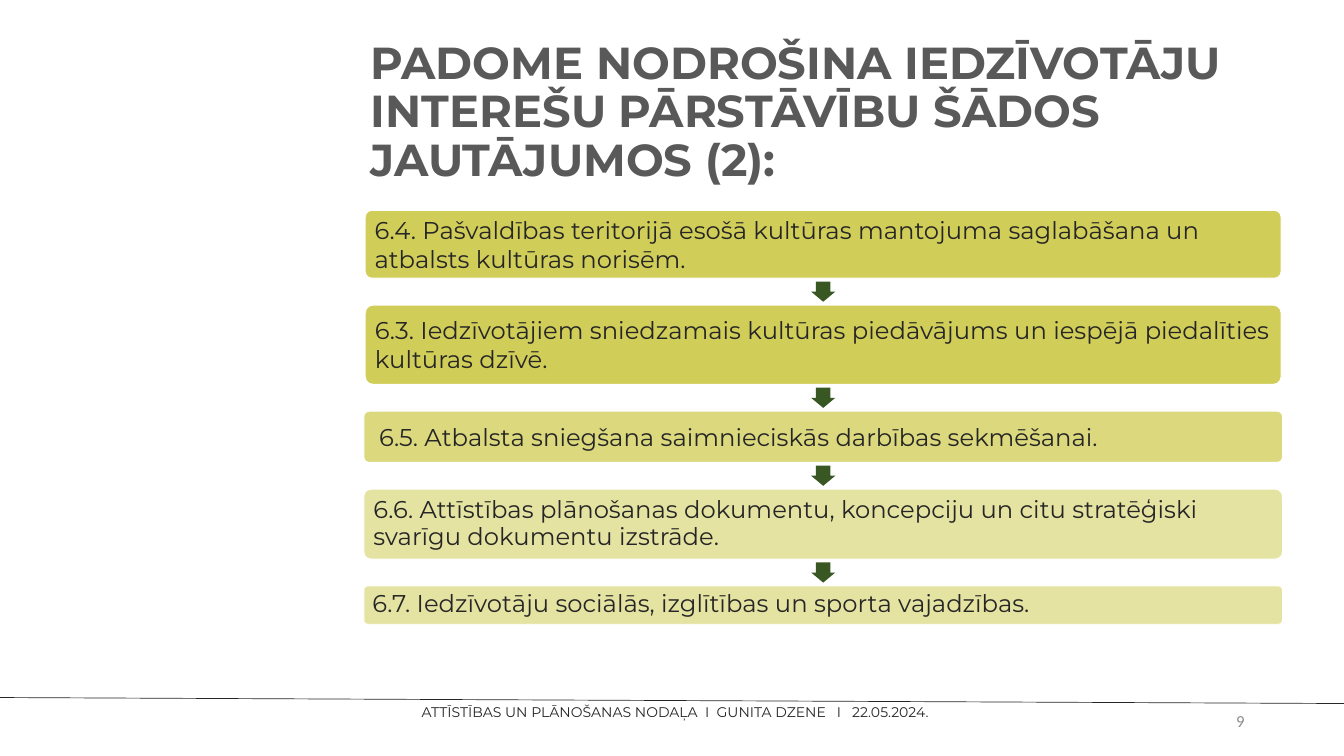
from lxml import etree
from pptx import Presentation
from pptx.dml.color import RGBColor
from pptx.enum.shapes import MSO_CONNECTOR, MSO_SHAPE
from pptx.enum.text import MSO_ANCHOR as ANCHOR, PP_ALIGN as ALIGN
from pptx.oxml.ns import qn
from pptx.util import Inches, Pt

COLORS = {
    "title": "595959",
    "text": "262626",
    "topic": "CDC847",
    "border": "FFFFFF",
    "arrow": "385723",
    "page": "8C8C8C",
}

# Topic text, box width, box height, opacity in percent, line spacing
TOPICS = [
    ("6.4. Pašvaldības teritorijā esošā kultūras mantojuma saglabāšana un "
     "atbalsts kultūras norisēm.", 13.63, 1.01, 90, 1.0),
    ("6.3. Iedzīvotājiem sniedzamais kultūras piedāvājums un iespējā piedalīties "
     "kultūras dzīvē.", 13.63, 1.18, 90, 1.0),
    (" 6.5. Atbalsta sniegšana saimnieciskās darbības sekmēšanai.",
     13.67, 0.76, 70, 1.0),
    ("6.6. Attīstības plānošanas dokumentu, koncepciju un citu stratēģiski "
     "svarīgu dokumentu izstrāde.", 13.67, 1.04, 50, 0.9),
    ("6.7. Iedzīvotāju sociālās, izglītības un sporta vajadzības.",
     13.67, 0.57, 50, 0.9),
]
FLOW_TOP, FLOW_CENTER, FLOW_GAP = 3.13, 12.25, 0.4
ARROW_WIDTH, ARROW_HEIGHT = 0.3, 0.36


def rgb(name):
    return RGBColor.from_string(COLORS[name])


def set_all(target, values):
    for name, value in values.items():
        setattr(target, name, value)


def write(shape, text, color, font, paragraph=None, anchor=ANCHOR.MIDDLE,
          insets=(0.1, 0.05)):
    side, edge = map(Inches, insets)
    frame = shape.text_frame
    set_all(frame, {"word_wrap": True, "vertical_anchor": anchor,
                    "margin_left": side, "margin_right": side,
                    "margin_top": edge, "margin_bottom": edge})
    line = frame.paragraphs[0]
    set_all(line, {"alignment": ALIGN.LEFT, **(paragraph or {})})
    run = line.add_run()
    run.text = text
    set_all(run.font, {"name": "Montserrat", **font})
    run.font.color.rgb = rgb(color)


def add_label(slide, box, *text_args, **text_options):
    label = slide.shapes.add_textbox(*map(Inches, box))
    write(label, *text_args, **text_options)


def add_filled(slide, kind, box, color, adjustments):
    shape = slide.shapes.add_shape(kind, *map(Inches, box))
    shape.shadow.inherit = False
    shape.fill.solid()
    shape.fill.fore_color.rgb = rgb(color)
    for index, value in enumerate(adjustments):
        shape.adjustments[index] = value
    return shape


def add_topic(slide, top, text, width, height, opacity, spacing):
    box = (FLOW_CENTER - width / 2, top, width, height)
    topic = add_filled(slide, MSO_SHAPE.ROUNDED_RECTANGLE, box, "topic", [0.1])
    topic.line.color.rgb = rgb("border")
    topic.line.width = Pt(1)
    fill_color = topic.fill._xPr.find(qn("a:solidFill"))[0]
    etree.SubElement(fill_color, qn("a:alpha"), val=str(opacity * 1000))
    write(topic, text, "text", {"size": Pt(26)},
          {"line_spacing": spacing}, insets=(0.11, 0.11))


def add_arrow(slide, top):
    box = (FLOW_CENTER - ARROW_WIDTH / 2, top, ARROW_WIDTH, ARROW_HEIGHT)
    arrow = add_filled(slide, MSO_SHAPE.RIGHT_ARROW, box, "arrow", [0.6, 0.5])
    arrow.rotation = 90
    arrow.line.fill.background()


def add_flow(slide):
    top = FLOW_TOP
    for number, (text, width, height, opacity, spacing) in enumerate(TOPICS, 1):
        add_topic(slide, top, text, width, height, opacity, spacing)
        top += height
        if number < len(TOPICS):
            add_arrow(slide, top + (FLOW_GAP - ARROW_HEIGHT) / 2)
        top += FLOW_GAP


def add_footer_rule(slide):
    ends = map(Inches, (0, 10.38, 20.11, 10.47))
    rule = slide.shapes.add_connector(MSO_CONNECTOR.STRAIGHT, *ends)
    rule.line.color.rgb = rgb("text")
    rule.line.width = Pt(0.75)
    etree.SubElement(rule._element.spPr, qn("a:effectLst"))


def main():
    deck = Presentation()
    set_all(deck, {"slide_width": Inches(20), "slide_height": Inches(11.25)})
    slide = deck.slides.add_slide(deck.slide_layouts[6])

    # Topics joined by arrows
    add_flow(slide)

    # Footer
    add_footer_rule(slide)
    add_label(slide, (0.15, 10.47, 19.8, 0.25),
              "ATTĪSTĪBAS UN PLĀNOŠANAS NODAĻA  I  GUNITA DZENE   I   22.05.2024.",
              "text", {"size": Pt(15)},
              {"alignment": ALIGN.CENTER, "line_spacing": Pt(18)},
              anchor=ANCHOR.TOP, insets=(0, 0))

    # Title
    add_label(slide, (5.42, 0.6, 13.21, 2.17),
              "PADOME NODROŠINA IEDZĪVOTĀJU INTEREŠU PĀRSTĀVĪBU ŠĀDOS "
              "JAUTĀJUMOS (2):",
              "title", {"size": Pt(48), "bold": True}, {"line_spacing": 0.9})

    # Page number
    add_label(slide, (14.12, 10.43, 4.5, 0.6), "9", "page",
              {"name": "Calibri", "size": Pt(18)}, {"alignment": ALIGN.RIGHT})

    deck.save("out.pptx")


if __name__ == "__main__":
    main()
